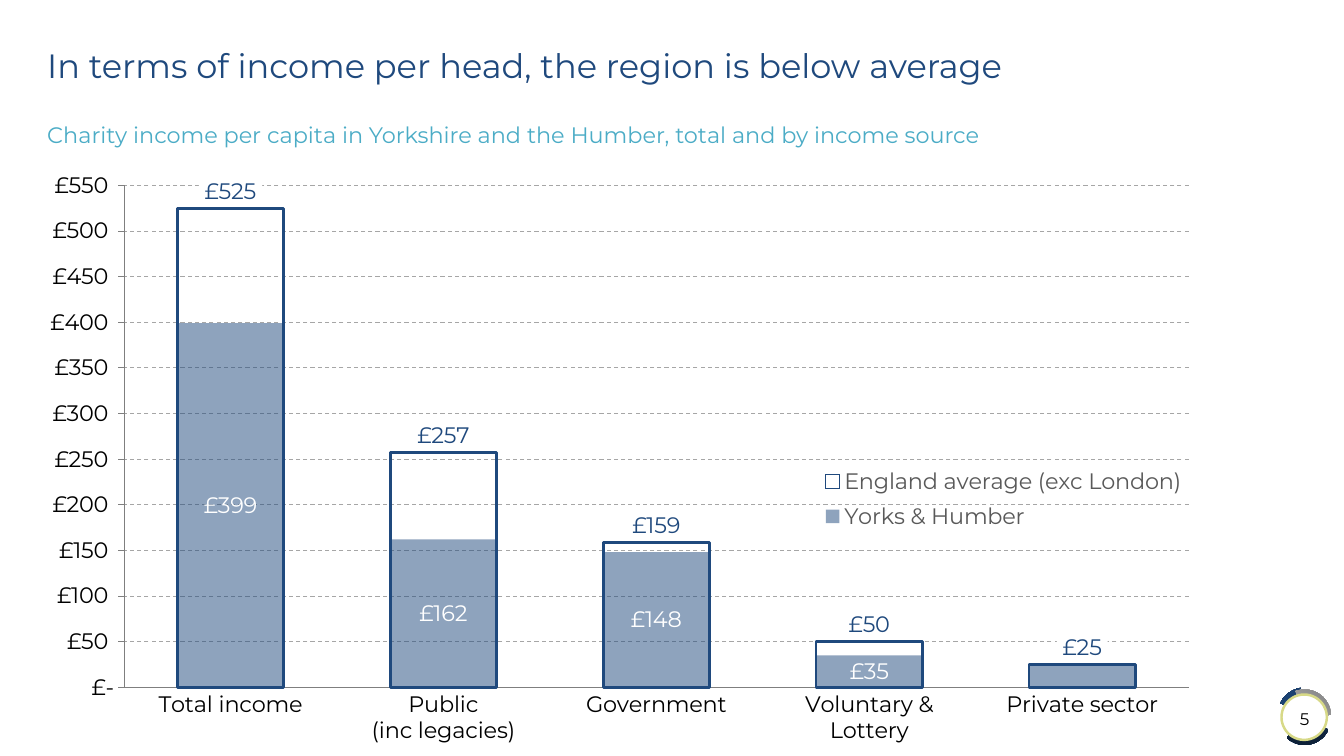
from dataclasses import dataclass

from pptx import Presentation
from pptx.chart import data as cd
from pptx.dml import color as col
from pptx.enum import chart as ch, dml, shapes, text
from pptx.oxml import ns, parse_xml
from pptx.util import Inches, Pt


@dataclass(frozen=True)
class Theme:
    face: str = "Montserrat"
    navy: str = "1F497D"
    night: str = "0E2138"
    teal: str = "4BACC6"
    lime: str = "D7D987"
    black: str = "000000"
    white: str = "FFFFFF"
    pale: str = "D9D9D9"
    mid: str = "808080"
    axis: str = "7F7F7F"
    grid: str = "A6A6A6"
    key: str = "595959"
    head: int = 24
    body: int = 16
    small: int = 12


@dataclass(frozen=True)
class Box:
    x: float
    y: float
    w: float
    h: float

    def emu(self) -> tuple:
        return tuple(Inches(n) for n in (self.x, self.y, self.w, self.h))


@dataclass(frozen=True)
class Wedge:
    box: Box
    turn: float
    start: float
    tints: tuple


@dataclass(frozen=True)
class Note:
    words: str
    box: Box
    size: int
    tint: str
    align: text.PP_ALIGN = text.PP_ALIGN.LEFT
    anchor: text.MSO_ANCHOR = text.MSO_ANCHOR.MIDDLE
    pitch: float = 1.0


@dataclass(frozen=True)
class Bars:
    name: str
    vals: tuple
    tint: str
    place: ch.XL_LABEL_POSITION


T = Theme()
MONEY = '_-"£"* #,##0_-;\\-"£"* #,##0_-;_-"£"* "-"'
FRAME = Box(0.21, 1.59, 11.81, 5.91)
PLOT = Box(1.23, 1.84, 10.56, 4.98)
KEY = Box(8.12, 4.56, 3.67, 0.78)
SPAN = 79.94

WEDGES = (
    Wedge(Box(12.68, 6.87, 0.52, 0.52), 0, 14.78, (T.navy, T.night)),
    Wedge(Box(12.67, 6.82, 0.55, 0.55), 126.6, 47.46, (T.night, T.navy)),
    Wedge(Box(12.68, 6.84, 0.52, 0.52), 225.1, 14.78, (T.pale, T.mid)),
)
NOTES = (
    Note("5", Box(12.68, 6.93, 0.52, 0.4), T.small, T.black,
         align=text.PP_ALIGN.CENTER),
    Note("In terms of income per head, the region is below average",
         Box(0.37, 0.27, 11.5, 0.81), T.head, T.navy, pitch=0.9),
    Note("Charity income per capita in Yorkshire and the Humber, "
         "total and by income source",
         Box(0.37, 1.15, 10.36, 0.37), T.body, T.teal,
         anchor=text.MSO_ANCHOR.TOP),
)
GROUPS = ("Total income", "Public\n(inc legacies)", "Government",
          "Voluntary & Lottery", "Private sector")
MEAN = Bars("England average (exc London)", (525, 257, 159, 50, 25),
            T.navy, ch.XL_LABEL_POSITION.OUTSIDE_END)
YORKS = Bars("Yorks & Humber", (399, 162, 148, 35, 25),
             T.white, ch.XL_LABEL_POSITION.CENTER)


def rgb(code: str) -> col.RGBColor:
    return col.RGBColor.from_string(code)


def style(font, size: int, tint: str) -> None:
    font.name, font.size, font.bold = T.face, Pt(size), False
    font.color.rgb = rgb(tint)


def stroke(line, tint: str, width: float) -> None:
    line.color.rgb = rgb(tint)
    line.width = Pt(width)


def node(xml: str):
    """Build an element whose root is in the chart namespace."""
    tag, rest = xml[1:].split(">", 1)
    return parse_xml(f"<{tag} {ns.nsdecls('c', 'a')}>{rest}")


def pin(host, spot: int, box: Box, inner: bool = False) -> None:
    """Fix a chart part at a place given in slide inches."""
    for old in host.findall(ns.qn("c:layout")):
        host.remove(old)
    parts = (("x", (box.x - FRAME.x) / FRAME.w),
             ("y", (box.y - FRAME.y) / FRAME.h),
             ("w", box.w / FRAME.w), ("h", box.h / FRAME.h))
    aim = '<c:layoutTarget val="inner"/>' if inner else ""
    modes = "".join(f'<c:{k}Mode val="edge"/>' for k in "xy")
    sizes = "".join(f'<c:{k} val="{v:.4f}"/>' for k, v in parts)
    host.insert(spot, node("<c:layout><c:manualLayout>" + aim + modes + sizes
                           + "</c:manualLayout></c:layout>"))


def wedge(slide, item: Wedge) -> None:
    pie = slide.shapes.add_shape(shapes.MSO_SHAPE.PIE, *item.box.emu())
    pie.adjustments[0], pie.adjustments[1] = item.start, SPAN
    pie.rotation = item.turn
    pie.shadow.inherit = False
    pie.line.fill.background()
    pie.fill.gradient()
    pie.fill.gradient_angle = 270
    for stop, tint, spot in zip(pie.fill.gradient_stops, item.tints, (0, 0.87)):
        stop.color.rgb = rgb(tint)
        stop.position = spot


def disc(slide) -> None:
    dot = slide.shapes.add_shape(shapes.MSO_SHAPE.OVAL,
                                 *Box(12.71, 6.89, 0.45, 0.45).emu())
    dot.shadow.inherit = False
    dot.fill.solid()
    dot.fill.fore_color.rgb = rgb(T.white)
    stroke(dot.line, T.lime, 1.75)


def note(slide, item: Note) -> None:
    frame = slide.shapes.add_textbox(*item.box.emu()).text_frame
    frame.word_wrap = True
    frame.vertical_anchor = item.anchor
    para = frame.paragraphs[0]
    para.alignment, para.line_spacing = item.align, item.pitch
    run = para.add_run()
    run.text = item.words
    style(run.font, item.size, item.tint)


def label(series, item: Bars):
    tags = series.data_labels
    tags.show_value = True
    tags.number_format, tags.number_format_is_linked = MONEY, False
    tags.position = item.place
    style(tags.font, T.body, item.tint)
    return series._element.find(ns.qn("c:dLbls"))


def graph(slide) -> None:
    data = cd.CategoryChartData()
    data.categories = GROUPS
    for item in (MEAN, YORKS):
        data.add_series(item.name, item.vals)
    chart = slide.shapes.add_chart(ch.XL_CHART_TYPE.COLUMN_CLUSTERED,
                                   *FRAME.emu(), data).chart
    chart.has_title = False
    style(chart.font, 10, T.black)
    plot = chart.plots[0]
    plot.gap_width = plot.overlap = 100
    plot.vary_by_categories = False

    # Axes and grid
    cats, vals = chart.category_axis, chart.value_axis
    for axis in (cats, vals):
        style(axis.tick_labels.font, T.body, T.black)
        stroke(axis.format.line, T.axis, 0.75)
    cats.major_tick_mark = ch.XL_TICK_MARK.NONE
    vals.major_tick_mark = ch.XL_TICK_MARK.OUTSIDE
    vals.minimum_scale, vals.maximum_scale, vals.major_unit = 0, 550, 50
    vals.tick_labels.number_format = MONEY
    vals.tick_labels.number_format_is_linked = False
    vals.has_major_gridlines = True
    grid = vals.major_gridlines.format.line
    stroke(grid, T.grid, 0.75)
    grid.dash_style = dml.MSO_LINE.DASH

    # Outlined average, with white behind its labels
    mean, yorks = plot.series
    mean.format.fill.background()
    stroke(mean.format.line, T.navy, 2)
    tags = label(mean, MEAN)
    tags.find(ns.qn("c:numFmt")).addnext(node(
        f'<c:spPr><a:solidFill><a:srgbClr val="{T.white}"/>'
        "</a:solidFill></c:spPr>"))

    # Half clear region bars; the last has no label
    yorks.format.fill.solid()
    yorks.format.fill.fore_color.rgb = rgb(T.navy)
    shade = yorks._element.find(".//" + ns.qn("a:srgbClr"))
    shade.append(node('<a:alpha>'.replace(">", "></a:alpha>")))
    shade[-1].set("val", "50000")
    label(yorks, YORKS).insert(0, node(
        f'<c:dLbl><c:idx val="{len(GROUPS) - 1}"/><c:delete val="1"/></c:dLbl>'))

    # Legend and fixed layout
    chart.has_legend = True
    key = chart.legend
    key.position = ch.XL_LEGEND_POSITION.RIGHT
    key.include_in_layout = True
    style(key.font, T.body, T.key)
    pin(key._element, 1, KEY)
    pin(chart._chartSpace.find(".//" + ns.qn("c:plotArea")), 0, PLOT, True)


def main() -> None:
    deck = Presentation()
    deck.slide_width, deck.slide_height = Inches(13.33), Inches(7.5)
    slide = deck.slides.add_slide(deck.slide_layouts[6])
    # Page badge
    for item in WEDGES:
        wedge(slide, item)
    disc(slide)
    # Chart and wording
    graph(slide)
    for item in NOTES:
        note(slide, item)
    deck.save("out.pptx")


if __name__ == "__main__":
    main()
